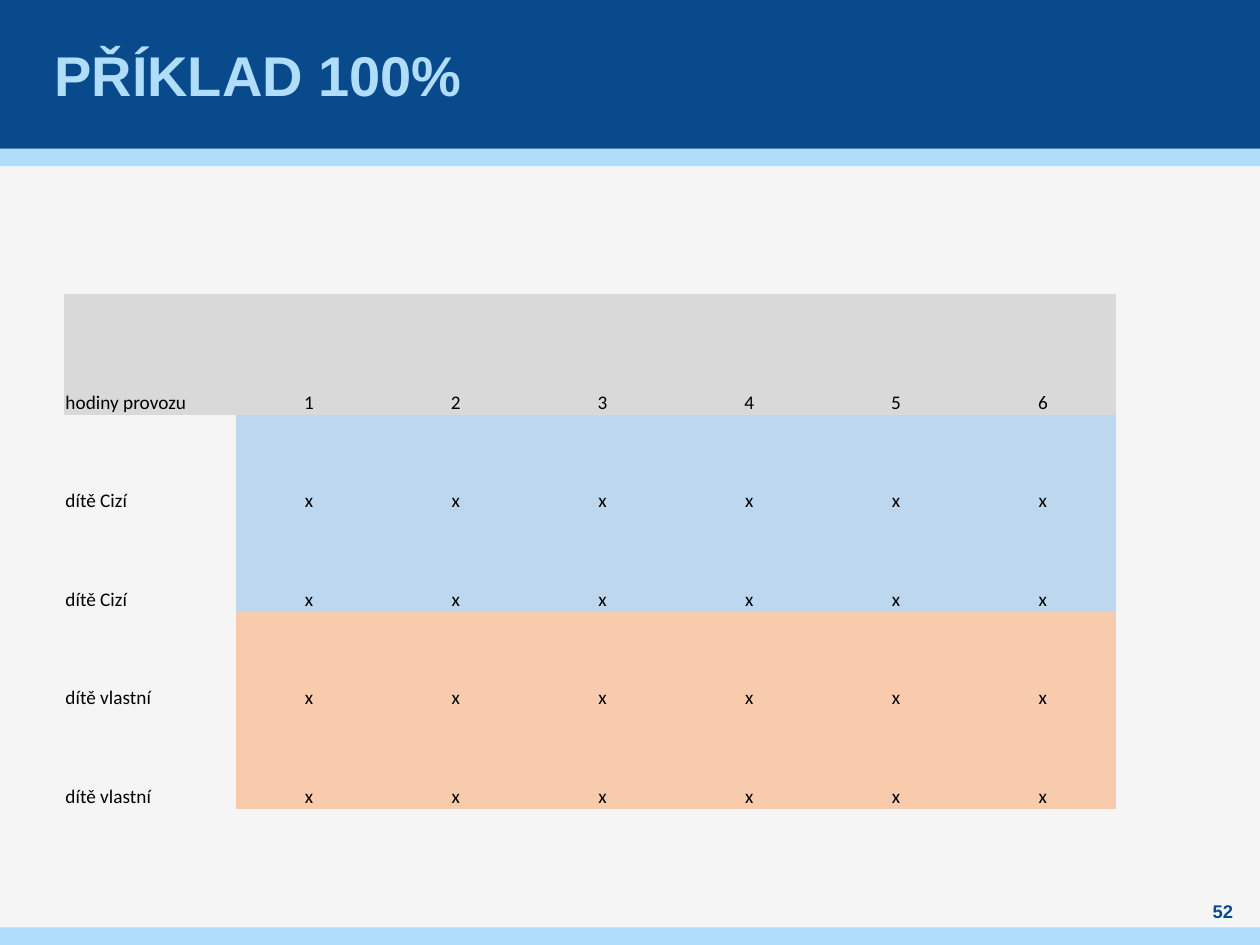
from dataclasses import dataclass

from pptx import Presentation
from pptx.dml.color import RGBColor
from pptx.enum.shapes import MSO_SHAPE
from pptx.enum.text import MSO_ANCHOR, PP_ALIGN
from pptx.oxml.ns import qn
from pptx.util import Inches, Pt

RECTANGLE = MSO_SHAPE.RECTANGLE
MIDDLE, BOTTOM = MSO_ANCHOR.MIDDLE, MSO_ANCHOR.BOTTOM
LEFT, CENTER = PP_ALIGN.LEFT, PP_ALIGN.CENTER
PLAIN_TABLE_STYLE = "{2D5ABB26-0587-4C30-8999-92F81FD0307C}"

WIDTH, HEIGHT = 10, 7.5
HEADER_HEIGHT, STRIPE_HEIGHT = 1.18, 0.14
HOURS = 6
LABEL_WIDTH, HOUR_WIDTH = 1.36, 1.165
HEADING_ROW, CHILD_ROW = 0.96, 0.7825
COLORS = {
    "paper": "F5F5F5",
    "navy": "084A8B",
    "sky": "AFDDFA",
    "black": "000000",
    "grey": "D9D9D9",
    "blue": "BDD7EE",
    "orange": "F8CBAD",
}


@dataclass(frozen=True)
class Band:
    top: float
    height: float
    color: str


@dataclass(frozen=True)
class Style:
    font: str
    size: float
    color: str
    bold: bool = False


@dataclass(frozen=True)
class Label:
    text: str
    left: float
    top: float
    width: float
    height: float
    inset: float
    align: PP_ALIGN
    style: Style


@dataclass(frozen=True)
class Row:
    label: str
    marks: list[str]
    color: str
    label_filled: bool = False


BANDS = [
    Band(HEADER_HEIGHT, STRIPE_HEIGHT, "sky"),
    Band(0, HEADER_HEIGHT, "navy"),
    Band(HEIGHT - STRIPE_HEIGHT, STRIPE_HEIGHT, "sky"),
]
LABELS = [
    Label("PŘÍKLAD 100%", 0.39, 0, 9.21, HEADER_HEIGHT, 0.04, LEFT,
          Style("Arial", 32, "sky", True)),
    Label("52", 9.45, 7.13, 0.51, 0.2, 0, CENTER,
          Style("Arial", 10.5, "navy", True)),
]
CELL_STYLE = Style("Calibri", 11, "black")
ATTENDED = ["x"] * HOURS
ROWS = [
    Row("hodiny provozu", [str(hour + 1) for hour in range(HOURS)], "grey", True),
    *[Row("dítě Cizí", ATTENDED, "blue")] * 2,
    *[Row("dítě vlastní", ATTENDED, "orange")] * 2,
]


def paint(fill, color: str) -> None:
    fill.solid()
    fill.fore_color.rgb = RGBColor.from_string(COLORS[color])


def write(frame, text: str, align: PP_ALIGN, style: Style) -> None:
    para = frame.paragraphs[0]
    para.alignment = align
    span = para.add_run()
    span.text = text
    span.font.name = style.font
    span.font.size = Pt(style.size)
    span.font.bold = style.bold
    span.font.color.rgb = RGBColor.from_string(COLORS[style.color])


def draw_band(page, band: Band) -> None:
    box = page.shapes.add_shape(
        RECTANGLE, 0, Inches(band.top), Inches(WIDTH), Inches(band.height))
    box.shadow.inherit = False
    box.line.fill.background()
    paint(box.fill, band.color)


def draw_label(page, label: Label) -> None:
    box = page.shapes.add_textbox(
        Inches(label.left), Inches(label.top), Inches(label.width), Inches(label.height))
    frame = box.text_frame
    frame.word_wrap = True
    frame.vertical_anchor = MIDDLE
    frame.margin_left = frame.margin_right = Inches(label.inset)
    frame.margin_top = frame.margin_bottom = 0
    write(frame, label.text, label.align, label.style)


def fill_cell(cell, text: str, align: PP_ALIGN, color: str | None) -> None:
    cell.vertical_anchor = BOTTOM
    cell.margin_left = cell.margin_right = cell.margin_top = Inches(0.01)
    cell.margin_bottom = 0
    if color:
        paint(cell.fill, color)
    else:
        cell.fill.background()
    write(cell.text_frame, text, align, CELL_STYLE)


def draw_hours_table(page, left: float, top: float) -> None:
    widths = [LABEL_WIDTH] + [HOUR_WIDTH] * HOURS
    heights = [HEADING_ROW] + [CHILD_ROW] * (len(ROWS) - 1)
    table = page.shapes.add_table(
        len(heights), len(widths), Inches(left), Inches(top),
        Inches(sum(widths)), Inches(sum(heights))).table
    table.first_row = table.horz_banding = False
    table._tbl.tblPr.find(qn("a:tableStyleId")).text = PLAIN_TABLE_STYLE
    for column, width in zip(table.columns, widths):
        column.width = Inches(width)
    for index, (row, height) in enumerate(zip(ROWS, heights)):
        table.rows[index].height = Inches(height)
        fill_cell(table.cell(index, 0), row.label, LEFT,
                  row.color if row.label_filled else None)
        for hour, mark in enumerate(row.marks, start=1):
            fill_cell(table.cell(index, hour), mark, CENTER, row.color)


def main() -> None:
    deck = Presentation()
    deck.slide_width, deck.slide_height = Inches(WIDTH), Inches(HEIGHT)
    page = deck.slides.add_slide(deck.slide_layouts[6])
    paint(page.background.fill, "paper")
    for band in BANDS:
        draw_band(page, band)
    for label in LABELS:
        draw_label(page, label)
    draw_hours_table(page, 0.51, 2.33)
    deck.save("out.pptx")


if __name__ == "__main__":
    main()
